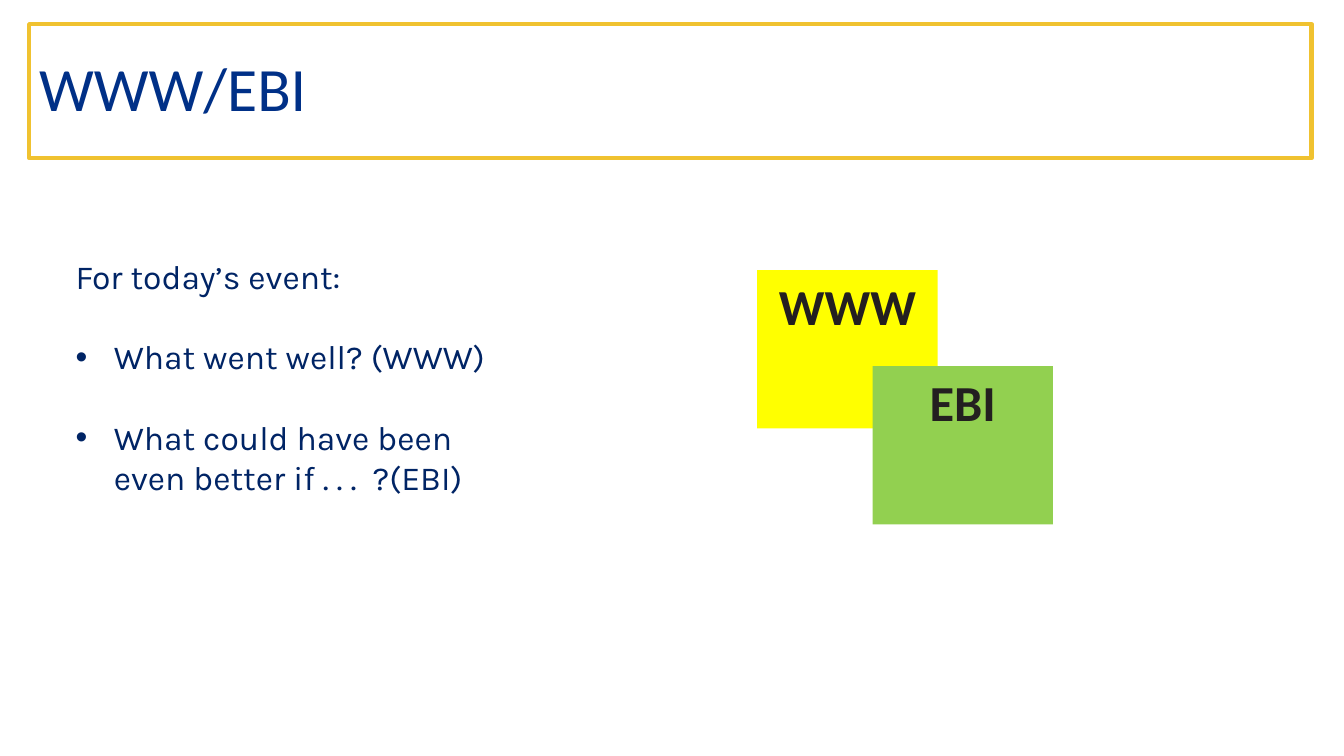
"""Build the WWW/EBI feedback slide."""
from pptx import Presentation, util as u
from pptx.dml.color import RGBColor
from pptx.enum import shapes, text
from pptx.oxml.xmlchemy import OxmlElement

WIDTH, HEIGHT = u.Inches(13.33), u.Inches(7.5)
COLUMN, ROW = WIDTH / 100, HEIGHT / 100

GOLD = RGBColor(0xF0, 0xC2, 0x30)
BLUE = RGBColor(0x00, 0x30, 0x87)
NAVY = RGBColor(0x00, 0x24, 0x65)
INK = RGBColor(0x23, 0x1F, 0x20)
YELLOW = RGBColor(0xFF, 0xFF, 0x00)
GREEN = RGBColor(0x92, 0xD0, 0x50)

INTRO = "For today’s event:"
QUESTIONS = ["What went well? (WWW)", "What could have been even better if . . .  ?(EBI)"]
NOTES = [("WWW", YELLOW), ("EBI", GREEN)]
NOTE_LEFT, NOTE_TOP = 56.34, 35.73
NOTE_STEP_X, NOTE_STEP_Y = 8.58, 12.7
NOTE_WIDTH, NOTE_HEIGHT = 13.43, 20.93


def place(left, top, width, height):
    """Turn grid columns and rows into lengths."""
    return [round(n) for n in (left * COLUMN, top * ROW, width * COLUMN, height * ROW)]


def style(paragraph, face, size, color, bold=False):
    """Format the text of a paragraph."""
    font = paragraph.font
    font.name, font.size, font.bold = face, u.Pt(size), bold
    font.color.rgb = color


def add_panel(slide, box, words, anchor, align):
    """Add a rectangle holding one line of text."""
    panel = slide.shapes.add_shape(shapes.MSO_SHAPE.RECTANGLE, *box)
    panel.shadow.inherit = False
    panel.text_frame.text = words
    panel.text_frame.vertical_anchor = anchor
    line = panel.text_frame.paragraphs[0]
    line.alignment = align
    return panel, line


def add_title(slide, words):
    """Add the gold-framed title."""
    frame, line = add_panel(slide, place(2.17, 3.2, 95.42, 17.73), words,
                            text.MSO_ANCHOR.MIDDLE, text.PP_ALIGN.LEFT)
    frame.fill.background()
    frame.line.color.rgb = GOLD
    frame.line.width = u.Pt(3)
    line.line_spacing = 0.9
    style(line, "Calibri", 44, BLUE)


def add_note(slide, box, words, color):
    """Add a coloured sticky note."""
    note, line = add_panel(slide, box, words, text.MSO_ANCHOR.TOP, text.PP_ALIGN.CENTER)
    note.fill.solid()
    note.fill.fore_color.rgb = color
    note.line.fill.background()
    style(line, "Calibri", 36, INK, bold=True)


def add_bullet(paragraph):
    """Give a paragraph a bullet with a hanging indent."""
    properties = paragraph._p.get_or_add_pPr()
    indent = u.Inches(0.38)
    properties.set("marL", str(indent))
    properties.set("indent", str(-indent))
    face, bullet = OxmlElement("a:buFont"), OxmlElement("a:buChar")
    face.set("typeface", "Arial")
    bullet.set("char", "•")
    properties.extend([face, bullet])


def add_questions(slide, intro, questions):
    """Add the introduction and its bulleted questions."""
    body = slide.shapes.add_textbox(*place(4.88, 33.2, 34.96, 33.6)).text_frame
    body.word_wrap = True
    body.text = intro
    style(body.paragraphs[0], "Karla", 24, NAVY)
    for question in questions:
        paragraph = body.add_paragraph()
        paragraph.text = question
        paragraph.space_before = u.Pt(28.6)
        add_bullet(paragraph)
        style(paragraph, "Karla", 24, NAVY)


def main():
    """Assemble and save the slide."""
    deck = Presentation()
    deck.slide_width, deck.slide_height = WIDTH, HEIGHT
    slide = deck.slides.add_slide(deck.slide_layouts[6])
    add_title(slide, "WWW/EBI")
    add_questions(slide, INTRO, QUESTIONS)
    for step, (words, color) in enumerate(NOTES):
        box = place(NOTE_LEFT + step * NOTE_STEP_X, NOTE_TOP + step * NOTE_STEP_Y,
                    NOTE_WIDTH, NOTE_HEIGHT)
        add_note(slide, box, words, color)
    deck.save("out.pptx")


if __name__ == "__main__":
    main()
